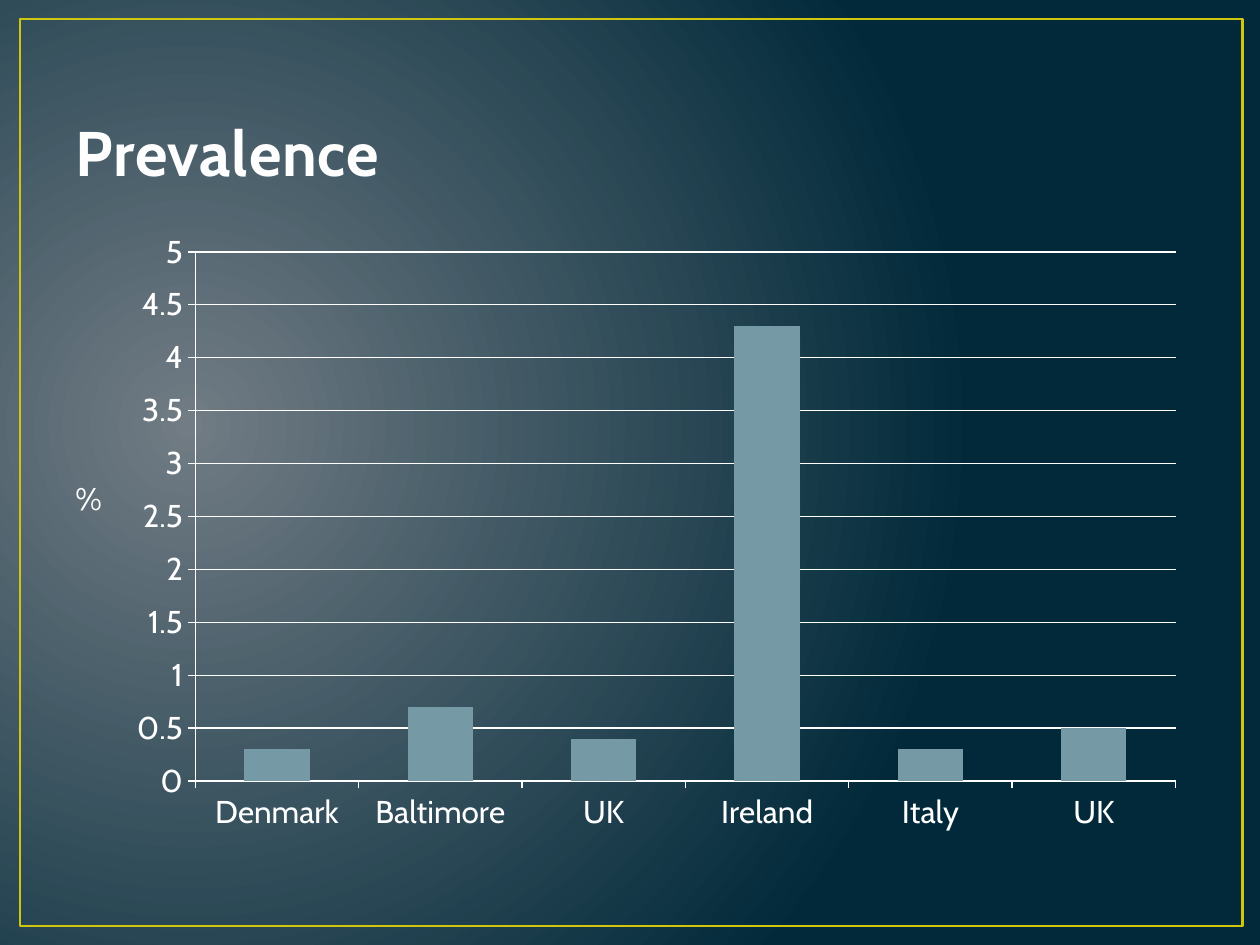
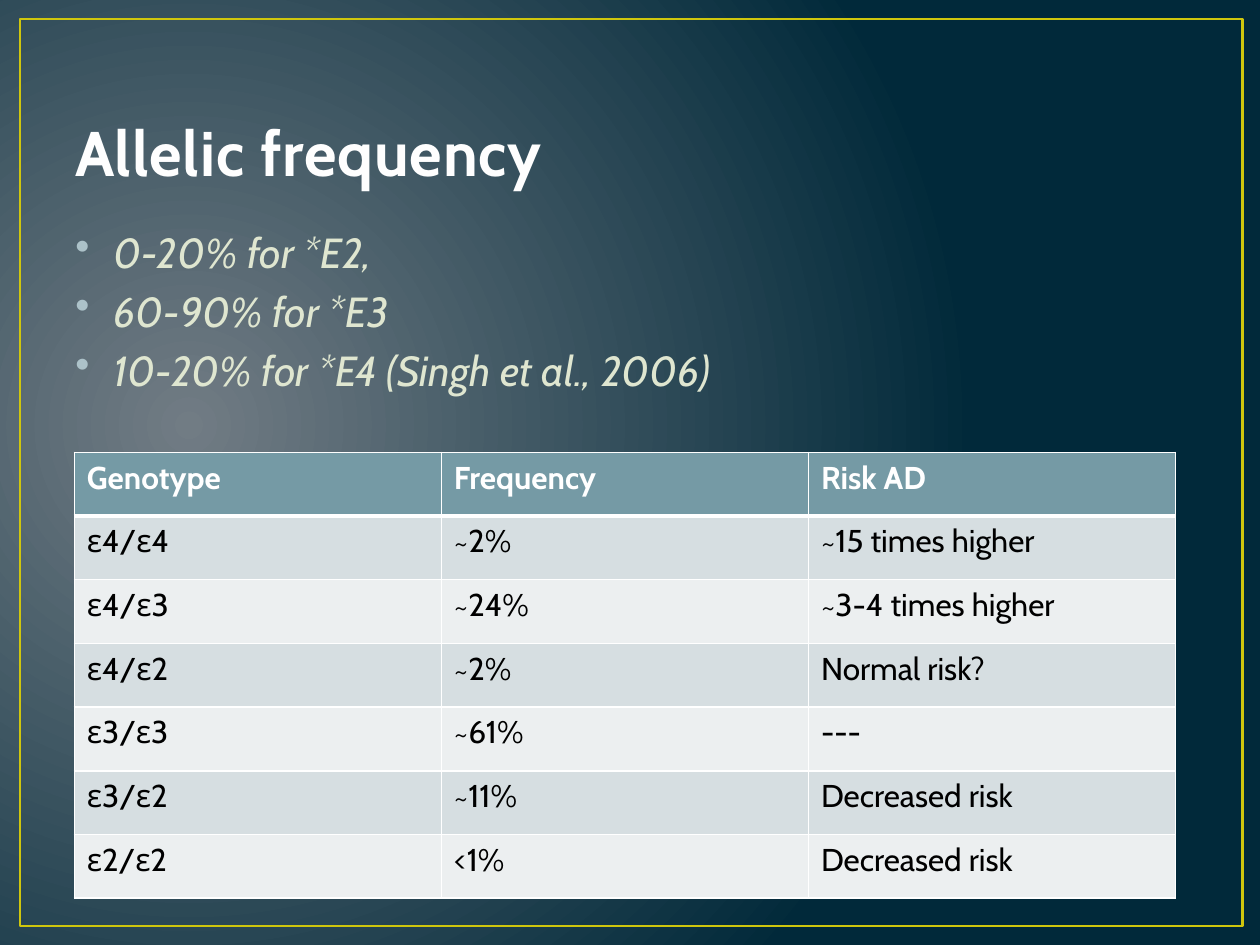
from lxml import etree
from pptx import Presentation
from pptx import util as u
from pptx.chart import data as chart_data
from pptx.dml import color
from pptx.enum import chart as chart_enum, shapes, text
from pptx.oxml import parse_xml
from pptx.oxml.ns import nsdecls, qn

PX = 9144  # EMU per px, 100 px to the inch
FONT = "Cabin"
COLORS = {
    "glow": "717C84", "night": "01293A", "frame": "CFC60D",
    "title": "FEFEFE", "outline": "384F55", "body": "DFE6D0",
    "bullet": "ACC2C9", "accent": "759AA5", "white": "FFFFFF",
    "black": "000000", "band_dark": "D6DEE1", "band_light": "ECEFF0",
}


def rgb(name):
    return color.RGBColor.from_string(COLORS[name])


def xml(tag, inner, attributes=""):
    """Make one drawing element from its tag, attributes and content."""
    prefix = tag.split(":")[0]
    names = nsdecls("a") if prefix == "a" else nsdecls("a", "c")
    return parse_xml(f"<{tag} {names} {attributes}>{inner}</{tag}>")


def solid(name):
    return f'<a:solidFill><a:srgbClr val="{COLORS[name]}"/></a:solidFill>'


class Deck:
    def __init__(self, width, height):
        self.presentation = Presentation()
        self.presentation.slide_width = width * PX
        self.presentation.slide_height = height * PX
        self.slide = None

    def add_slide(self, title):
        """Start a slide with the shared background, frame and title."""
        layout = self.presentation.slide_layouts[6]
        self.slide = self.presentation.slides.add_slide(layout)
        self.background()
        self.frame(16, 15, 970, 720)
        self.title(title)

    def background(self):
        fill = self.slide.background.fill
        fill.gradient()
        for stop, name in zip(fill.gradient_stops, ("glow", "night")):
            stop.color.rgb = rgb(name)
        linear = next(self.slide.element.iter(qn("a:lin")))
        center = '<a:fillToRect l="15000" t="50000" r="85000" b="60000"/>'
        linear.getparent().replace(
            linear, xml("a:path", center, 'path="circle"'))

    def frame(self, x, y, width, height):
        shape = self.slide.shapes.add_shape(
            shapes.MSO_SHAPE.RECTANGLE, x * PX, y * PX, width * PX, height * PX)
        shape.shadow.inherit = False
        shape.fill.background()
        shape.line.color.rgb = rgb("frame")
        shape.line.width = u.Pt(1.5)

    def style(self, font, size, name, bold=False, italic=False):
        font.name = FONT
        font.size = u.Pt(size)
        font.bold = bold
        font.italic = italic
        font.color.rgb = rgb(name)

    def text(self, content, x, y, width, height, size, name, **emphasis):
        shape = self.slide.shapes.add_textbox(
            x * PX, y * PX, width * PX, height * PX)
        shape.text_frame.word_wrap = True
        shape.text_frame.text = content
        for paragraph in shape.text_frame.paragraphs:
            self.style(paragraph.runs[0].font, size, name, **emphasis)
        return shape

    def title(self, content):
        shape = self.text(content, 50, 30, 900, 125, 36, "title", bold=True)
        shape.text_frame.vertical_anchor = text.MSO_ANCHOR.BOTTOM
        properties = shape.text_frame.paragraphs[0].runs[0].font._element
        properties.set("spc", "50")
        properties.insert(
            0, xml("a:ln", solid("outline"), f'w="{u.Pt(1.05)}"'))

    def bullets(self, items, x, y, width, height):
        shape = self.text(
            "\n".join(items), x, y, width, height, 24, "body", italic=True)
        for paragraph in shape.text_frame.paragraphs:
            paragraph.space_before = u.Pt(4.8)
            properties = paragraph._p.get_or_add_pPr()
            properties.set("marL", str(30 * PX))
            properties.set("indent", str(-30 * PX))
            properties.append(xml(
                "a:buClr", f'<a:srgbClr val="{COLORS["bullet"]}"/>'))
            properties.append(xml("a:buChar", "", 'char="•"'))

    def column_chart(self, categories, values, box, plot_box, maximum, step):
        data = chart_data.CategoryChartData()
        data.categories = categories
        data.add_series("Series 1", values)
        chart = self.slide.shapes.add_chart(
            chart_enum.XL_CHART_TYPE.COLUMN_CLUSTERED,
            *(length * PX for length in box), data).chart
        chart.has_legend = False
        chart.has_title = False
        self.style(chart.font, 18, "white")

        # Columns
        plot = chart.plots[0]
        plot.gap_width = 150
        plot.vary_by_categories = False
        fill = plot.series[0].format.fill
        fill.solid()
        fill.fore_color.rgb = rgb("accent")

        # Axes and gridlines
        value_axis = chart.value_axis
        value_axis.minimum_scale = 0
        value_axis.maximum_scale = maximum
        value_axis.major_unit = step
        value_axis.has_major_gridlines = True
        value_axis.tick_labels.number_format = "General"
        value_axis.tick_labels.number_format_is_linked = False
        for axis in (value_axis, chart.category_axis):
            axis.major_tick_mark = chart_enum.XL_TICK_MARK.OUTSIDE
        for part in (value_axis, chart.category_axis,
                     value_axis.major_gridlines):
            part.format.line.color.rgb = rgb("white")
            part.format.line.width = u.Pt(0.75)
        self.place_plot(chart, box, plot_box)

    def place_plot(self, chart, box, plot_box):
        """Fix the inner plot area as fractions of the chart box."""
        left, top, width, height = box
        x, y, plot_width, plot_height = plot_box
        fractions = {"x": (x - left) / width, "y": (y - top) / height,
                     "w": plot_width / width, "h": plot_height / height}
        inner = '<c:layoutTarget val="inner"/>'
        inner += '<c:xMode val="edge"/><c:yMode val="edge"/>'
        inner += "".join(f'<c:{key} val="{value:.4f}"/>'
                         for key, value in fractions.items())
        area = next(chart._chartSpace.iter(qn("c:plotArea")))
        for layout in area.findall(qn("c:layout")):
            area.remove(layout)
        area.insert(0, xml(
            "c:layout", f"<c:manualLayout>{inner}</c:manualLayout>"))

    def table(self, rows, x, y, width, height):
        table = self.slide.shapes.add_table(
            len(rows), len(rows[0]), x * PX, y * PX,
            width * PX, height * PX).table
        for row, values in enumerate(rows):
            header = row == 0
            band = "band_dark" if row % 2 else "band_light"
            for column, value in enumerate(values):
                cell = table.cell(row, column)
                cell.text = value
                self.style(cell.text_frame.paragraphs[0].runs[0].font, 18,
                           "white" if header else "black", bold=header)
                cell.fill.solid()
                cell.fill.fore_color.rgb = rgb("accent" if header else band)
                self.borders(cell, top=3 if row == 1 else 1,
                             bottom=3 if header else 1)

    def borders(self, cell, top, bottom):
        properties = cell._tc.get_or_add_tcPr()
        widths = {"L": 1, "R": 1, "T": top, "B": bottom}
        for index, (side, width) in enumerate(widths.items()):
            properties.insert(index, xml(
                f"a:ln{side}", solid("white"), f'w="{u.Pt(width)}"'))


def main():
    deck = Deck(1000, 750)

    # Prevalence by place
    deck.add_slide("Prevalence")
    deck.column_chart(
        ["Denmark", "Baltimore", "UK", "Ireland", "Italy", "UK"],
        [0.3, 0.7, 0.4, 4.3, 0.3, 0.5],
        box=(92, 175, 858, 495), plot_box=(155, 200, 778, 420),
        maximum=5, step=0.5)
    deck.text("%", 50, 375, 42, 40, 18, "white")

    # Allele shares and genotype risks
    deck.add_slide("Allelic frequency")
    deck.bullets(
        ["0-20% for *E2,", "60-90% for *E3",
         "10-20% for *E4 (Singh et al., 2006)"],
        50, 175, 900, 495)
    deck.table([
        ("Genotype", "Frequency", "Risk AD"),
        ("ε4/ε4", "~2%", "~15 times higher"),
        ("ε4/ε3", "~24%", "~3-4 times higher"),
        ("ε4/ε2", "~2%", "Normal risk?"),
        ("ε3/ε3", "~61%", "---"),
        ("ε3/ε2", "~11%", "Decreased risk"),
        ("ε2/ε2", "<1%", "Decreased risk"),
    ], 59, 359, 874, 354)

    deck.presentation.save("out.pptx")


if __name__ == "__main__":
    main()
